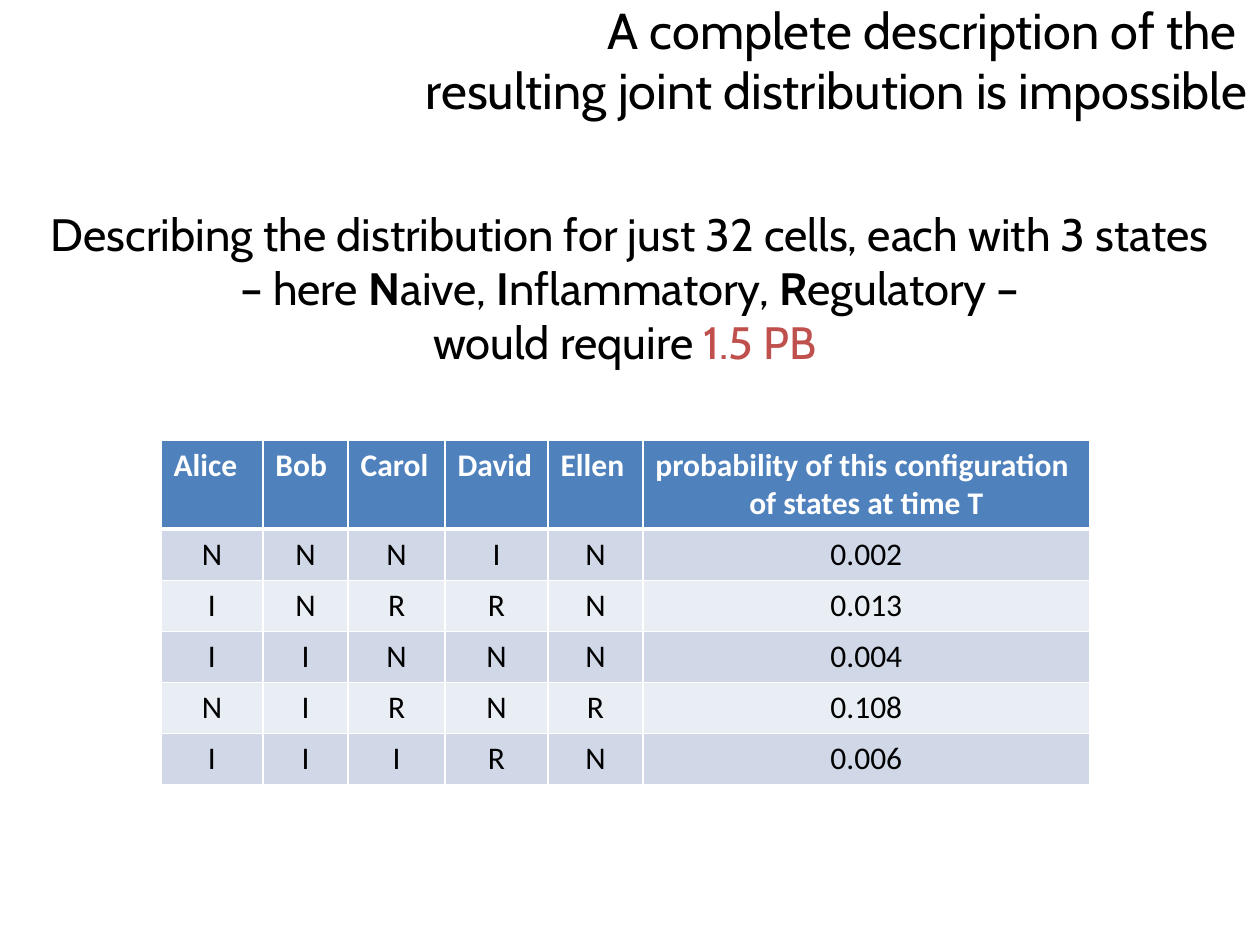
import pptx
import pptx.dml.color
import pptx.enum.text
import pptx.oxml.ns
import pptx.util
from lxml import etree

Pt = pptx.util.Pt
ALIGN = pptx.enum.text.PP_ALIGN
ANCHOR = pptx.enum.text.MSO_ANCHOR
COLORS = {
    "text": "000000",
    "accent": "C0504D",
    "header": "4F81BD",
    "band_dark": "D0D8E8",
    "band_light": "E9EDF4",
    "white": "FFFFFF",
}


def style_font(font, face, size, color, bold=False):
    font.name = face
    font.size = Pt(size)
    font.bold = bold
    font.color.rgb = pptx.dml.color.RGBColor.from_string(COLORS[color])


def add_border(cell, side, width):
    properties = cell._tc.get_or_add_tcPr()
    line = etree.SubElement(properties, pptx.oxml.ns.qn(f"a:ln{side}"), w=str(Pt(width)))
    fill = etree.SubElement(line, pptx.oxml.ns.qn("a:solidFill"))
    etree.SubElement(fill, pptx.oxml.ns.qn("a:srgbClr"), val=COLORS["white"])


deck = pptx.Presentation()
deck.slide_width, deck.slide_height = Pt(720), Pt(540)
slide = deck.slides.add_slide(deck.slide_layouts[6])

# Title
title = slide.shapes.add_textbox(Pt(120), Pt(0), Pt(600), Pt(67.5)).text_frame
title.word_wrap = True
title.vertical_anchor = ANCHOR.MIDDLE
title.text = "A complete description of the \vresulting joint distribution is impossible"
title.paragraphs[0].alignment = ALIGN.RIGHT
for run in title.paragraphs[0].runs:
    style_font(run.font, "Cabin", 28.8, "text")

# Statement: lines of (text, color, bold)
statement_lines = [
    [("Describing the distribution for just 32 cells, each with 3 states", "text", False)],
    [
        ("– here ", "text", False),
        ("N", "text", True),
        ("aive, ", "text", False),
        ("I", "text", True),
        ("nflammatory, ", "text", False),
        ("R", "text", True),
        ("egulatory –", "text", False),
    ],
    [("would require ", "text", False), ("1.5 PB ", "accent", False)],
]
statement = slide.shapes.add_textbox(Pt(0), Pt(114), Pt(720), Pt(134)).text_frame
statement.word_wrap = True
sentence = statement.paragraphs[0]
sentence.alignment = ALIGN.CENTER
for number, pieces in enumerate(statement_lines):
    if number:
        sentence.add_line_break()
    for text, color, bold in pieces:
        run = sentence.add_run()
        run.text = text
        style_font(run.font, "Cabin", 25.9, color, bold)

# Table of state configurations
configurations = [
    ["Alice", "Bob", "Carol", "David", "Ellen",
     "probability of this configuration\nof states at time T"],
    ["N", "N", "N", "I", "N", "0.002"],
    ["I", "N", "R", "R", "N", "0.013"],
    ["I", "I", "N", "N", "N", "0.004"],
    ["N", "I", "R", "N", "R", "0.108"],
    ["I", "I", "I", "R", "N", "0.006"],
]
column_widths = [58.2, 48.7, 55.4, 58.9, 54.2, 255.4]
row_heights = [51.1] + [29.2] * 5
table = slide.shapes.add_table(
    len(row_heights), len(column_widths),
    Pt(92), Pt(251.3), Pt(sum(column_widths)), Pt(sum(row_heights)),
).table
for column, width in zip(table.columns, column_widths):
    column.width = Pt(width)
for row, height in zip(table.rows, row_heights):
    row.height = Pt(height)

for r, values in enumerate(configurations):
    is_header = r == 0
    band = "header" if is_header else "band_dark" if r % 2 else "band_light"
    for c, value in enumerate(values):
        cell = table.cell(r, c)
        for side in "LRTB":
            thick = (is_header and side == "B") or (r == 1 and side == "T")
            add_border(cell, side, 3 if thick else 1)
        cell.fill.solid()
        cell.fill.fore_color.rgb = pptx.dml.color.RGBColor.from_string(COLORS[band])
        cell.text_frame.text = value
        for p, paragraph in enumerate(cell.text_frame.paragraphs):
            paragraph.alignment = ALIGN.LEFT if is_header and p == 0 else ALIGN.CENTER
            style_font(paragraph.runs[0].font, "Calibri", 18,
                       "white" if is_header else "text", is_header)

deck.save("out.pptx")
